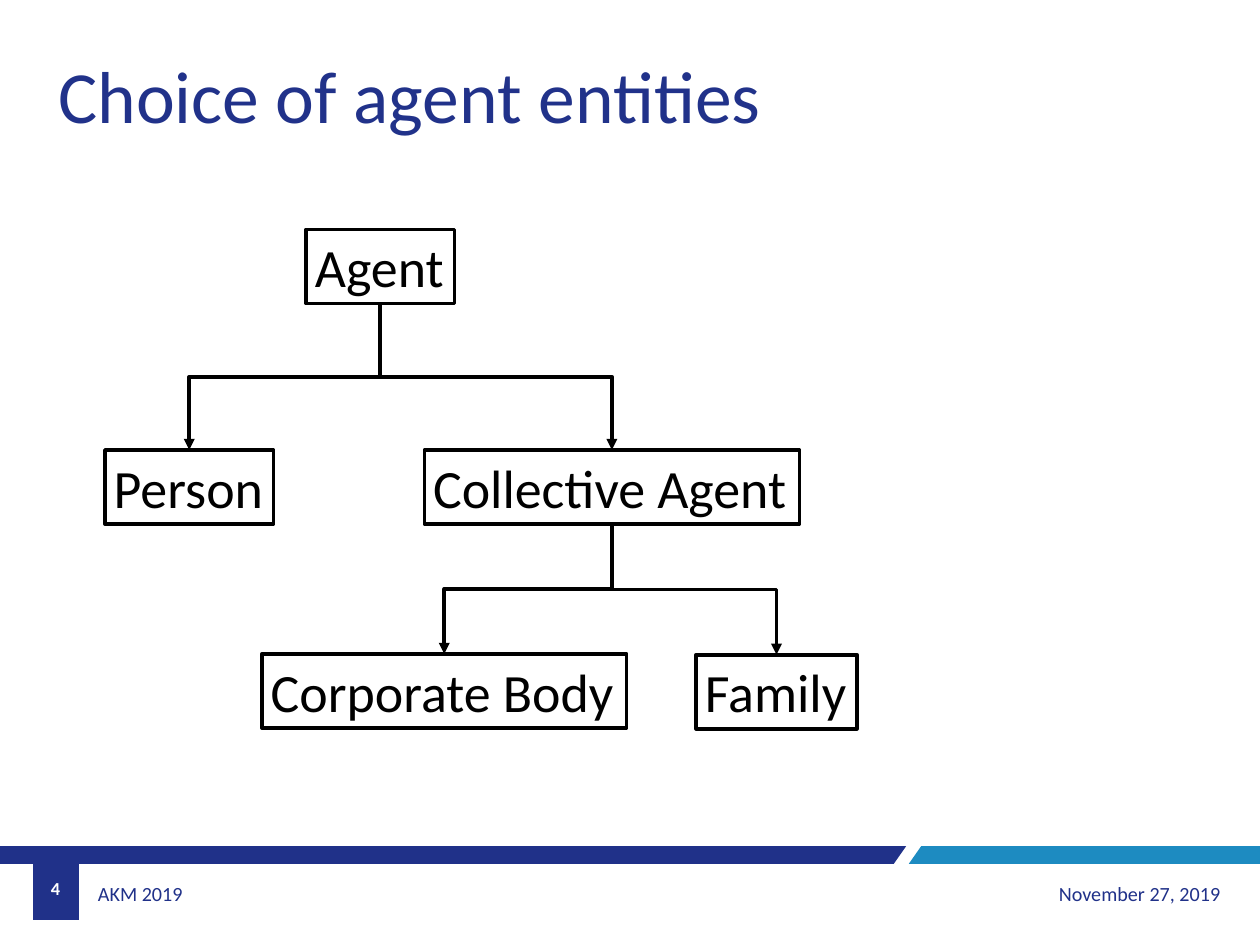
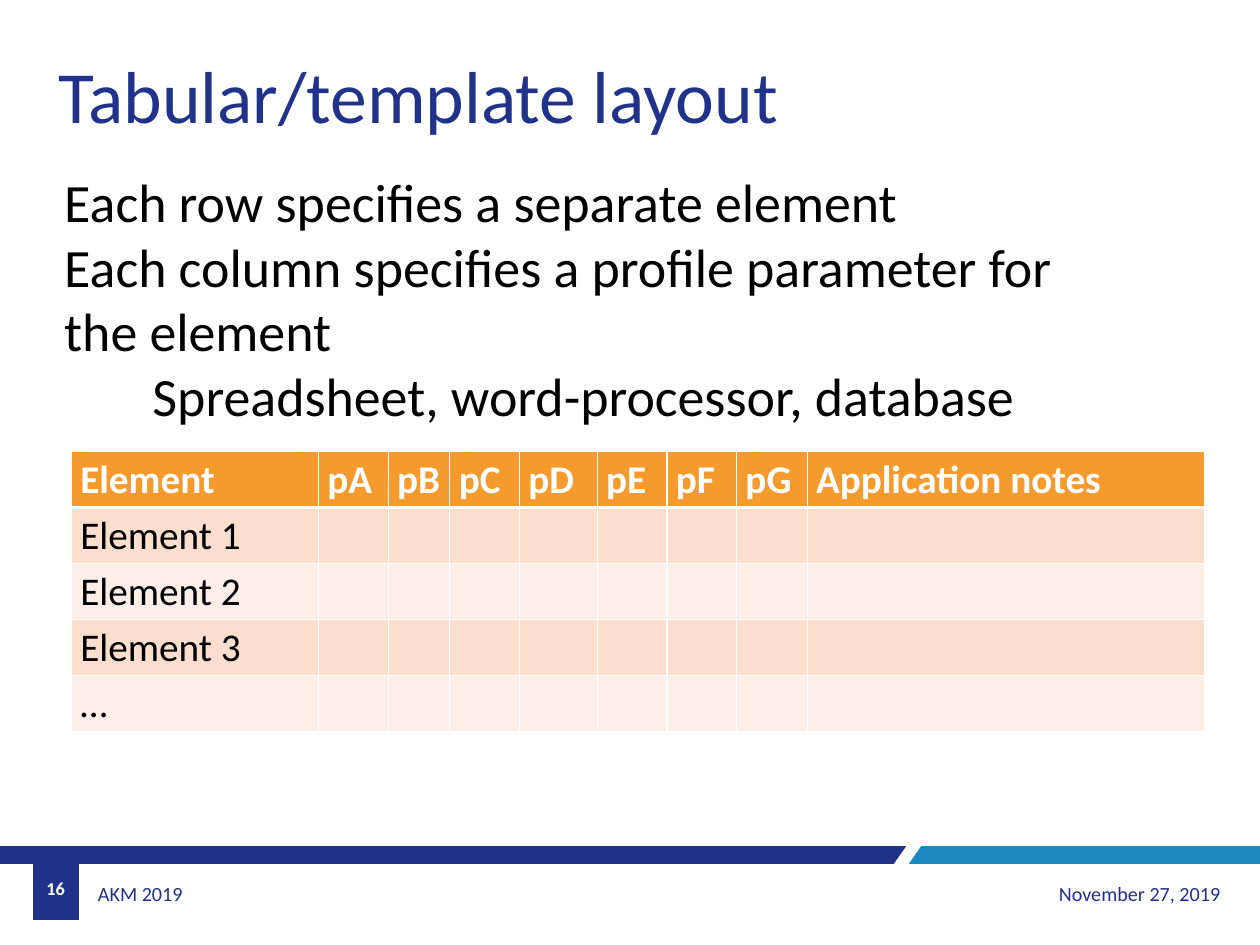
from dataclasses import dataclass
from typing import NamedTuple

from lxml.etree import SubElement
from pptx import Presentation
from pptx.dml.color import RGBColor
from pptx.enum.shapes import MSO_CONNECTOR, MSO_SHAPE
from pptx.enum.text import MSO_ANCHOR, MSO_AUTO_SIZE, PP_ALIGN
from pptx.oxml import parse_xml
from pptx.oxml.ns import nsdecls, qn
from pptx.shapes.autoshape import Shape
from pptx.slide import Slide
from pptx.table import _Cell
from pptx.text.text import TextFrame
from pptx.util import Inches, Pt


@dataclass(frozen=True)
class Theme:
    """Colours, type sizes and font shared by all slides."""

    font: str = "Calibri"
    navy: str = "203189"
    sky: str = "1D8BC1"
    title: str = "21328A"
    ink: str = "000000"
    paper: str = "FFFFFF"
    header: str = "F59B2D"
    bands: tuple[str, str] = ("FBDECD", "FDEFE8")
    title_size: float = 60
    body_size: float = 44
    table_size: float = 32
    footer_size: float = 16.4
    number_size: float = 14.9
    line: float = 3


class Box(NamedTuple):
    """Position and size in inches."""

    left: float
    top: float
    width: float
    height: float


class Entity(NamedTuple):
    """A box of the diagram and the name of its parent."""

    name: str
    left: float
    top: float
    width: float
    parent: str = ""


T = Theme()
SLIDE_WIDTH, SLIDE_HEIGHT = 14.28, 10.71
BAND_TOP, BAND_BOTTOM = 9.59, 9.79
FOOTER_TOP, FOOTER_HEIGHT = 9.85, 0.55
ENTITY_HEIGHT = 0.84
ENTITIES = (
    Entity("Agent", 3.47, 2.6, 1.68),
    Entity("Person", 1.19, 5.1, 1.91, "Agent"),
    Entity("Collective Agent", 4.81, 5.1, 4.25, "Agent"),
    Entity("Corporate Body", 2.97, 7.41, 4.13, "Collective Agent"),
    Entity("Family", 7.89, 7.42, 1.82, "Collective Agent"),
)
COLUMNS = {
    "Element": 2.8, "pA": 0.79, "pB": 0.7, "pC": 0.79, "pD": 0.88,
    "pE": 0.79, "pF": 0.79, "pG": 0.8, "Application notes": 4.5,
}
ROWS = ("Element 1", "Element 2", "Element 3", "…")
ROW_HEIGHT = 0.63
BODY = (
    "Each row specifies a separate element",
    "Each column specifies a profile parameter for the element",
    "Spreadsheet, word-processor, database",
)


def rgb(color: str) -> RGBColor:
    """Turn a hex string into a colour."""
    return RGBColor.from_string(color)


def emu(box: Box) -> tuple[Inches, ...]:
    """Convert a box to lengths."""
    return tuple(Inches(v) for v in box)


def write(tf: TextFrame, text: str, size: float, color: str, *, bold: bool = False,
          align: PP_ALIGN = PP_ALIGN.LEFT) -> None:
    """Set the text of a frame and format its runs."""
    tf.text = text
    for p in tf.paragraphs:
        p.alignment = align
        for r in p.runs:
            r.font.name, r.font.size, r.font.bold = T.font, Pt(size), bold
            r.font.color.rgb = rgb(color)


def add_text(s: Slide, box: Box, text: str, size: float, color: str, *, bold: bool = False,
             align: PP_ALIGN = PP_ALIGN.LEFT, anchor: MSO_ANCHOR = MSO_ANCHOR.MIDDLE) -> TextFrame:
    """Add a wrapping text box."""
    tf = s.shapes.add_textbox(*emu(box)).text_frame
    tf.word_wrap = True
    tf.vertical_anchor = anchor
    write(tf, text, size, color, bold=bold, align=align)
    return tf


def add_area(s: Slide, points: list[tuple[float, float]], color: str) -> None:
    """Draw a filled polygon without outline."""
    start, *rest = [(Inches(x), Inches(y)) for x, y in points]
    builder = s.shapes.build_freeform(*start)
    builder.add_line_segments(rest, close=True)
    sp = builder.convert_to_shape()
    sp.shadow.inherit = False
    sp.fill.solid()
    sp.fill.fore_color.rgb = rgb(color)
    sp.line.fill.background()


def add_slide(prs: Presentation, title: str, title_width: float, number: int) -> Slide:
    """Add a slide with title, bands and footer."""
    s = prs.slides.add_slide(prs.slide_layouts[5])
    add_area(s, [(0, BAND_TOP), (10.27, BAND_TOP), (10.13, BAND_BOTTOM), (0, BAND_BOTTOM)], T.navy)
    add_area(s, [(10.44, BAND_TOP), (SLIDE_WIDTH, BAND_TOP), (SLIDE_WIDTH, BAND_BOTTOM),
                 (10.3, BAND_BOTTOM)], T.sky)
    add_area(s, [(0.37, BAND_TOP), (0.89, BAND_TOP), (0.89, 10.43), (0.37, 10.43)], T.navy)
    tf = add_text(s, Box(1.04, FOOTER_TOP, 5.52, FOOTER_HEIGHT), "AKM 2019", T.footer_size, T.navy)
    tf.margin_left = tf.margin_right = Inches(0.07)
    tf.margin_top = tf.margin_bottom = Inches(0.04)
    add_text(s, Box(10.27, FOOTER_TOP, 3.66, FOOTER_HEIGHT), "November 27, 2019",
             T.footer_size, T.navy, align=PP_ALIGN.RIGHT)
    add_text(s, Box(0.37, BAND_BOTTOM, 0.52, FOOTER_HEIGHT), str(number), T.number_size,
             T.paper, bold=True, align=PP_ALIGN.CENTER)
    sp = s.shapes.title
    sp.left, sp.top, sp.width, sp.height = emu(Box(0.56, 0.52, title_width, 1.11))
    tf = sp.text_frame
    tf.word_wrap = False
    tf.auto_size = MSO_AUTO_SIZE.NONE
    tf.vertical_anchor = MSO_ANCHOR.TOP
    write(tf, title, T.title_size, T.title)
    return s


def add_entity(s: Slide, entity: Entity) -> Shape:
    """Draw one outlined box of the diagram."""
    box = Box(entity.left, entity.top, entity.width, ENTITY_HEIGHT)
    sp = s.shapes.add_shape(MSO_SHAPE.RECTANGLE, *emu(box))
    sp.shadow.inherit = False
    sp.fill.background()
    sp.line.color.rgb = rgb(T.ink)
    sp.line.width = Pt(T.line)
    tf = sp.text_frame
    tf.word_wrap = False
    tf.vertical_anchor = MSO_ANCHOR.TOP
    write(tf, entity.name, T.body_size, T.ink)
    return sp


def add_branch(s: Slide, parent: Shape, child: Shape) -> None:
    """Join the bottom of a parent to the top of a child with an elbow arrow."""
    x1, y1 = parent.left + parent.width // 2, parent.top + parent.height
    x2, y2 = child.left + child.width // 2, child.top
    c = s.shapes.add_connector(MSO_CONNECTOR.ELBOW, x1, y1, x2, y2)
    c.begin_connect(parent, 2)
    c.end_connect(child, 0)
    to_right = x2 > x1
    run, drop = abs(x2 - x1), y2 - y1
    xfrm = c._element.spPr.xfrm
    xfrm.flipH, xfrm.flipV = to_right, False
    c.rotation = 270 if to_right else 90
    c.left, c.top = (x1 + x2 - drop) // 2, (y1 + y2 - run) // 2
    c.width, c.height = drop, run
    c.line.color.rgb = rgb(T.ink)
    c.line.width = Pt(T.line)
    SubElement(c.line._get_or_add_ln(), qn("a:tailEnd"), type="triangle")
    SubElement(c._element.spPr, qn("a:effectLst"))


def style_cell(cell: _Cell, text: str, row: int) -> None:
    """Fill, border and write one table cell."""
    header = row == 0
    cell.fill.solid()
    cell.fill.fore_color.rgb = rgb(T.header if header else T.bands[(row - 1) % 2])
    widths = {"L": 1, "R": 1, "T": 3 if row == 1 else 1, "B": 3 if header else 1}
    for i, (side, width) in enumerate(widths.items()):
        cell._tc.get_or_add_tcPr().insert(i, parse_xml(
            f'<a:ln{side} {nsdecls("a")} w="{Pt(width)}"><a:solidFill>'
            f'<a:srgbClr val="{T.paper}"/></a:solidFill></a:ln{side}>'))
    write(cell.text_frame, text, T.table_size, T.paper if header else T.ink, bold=header)


def add_element_table(s: Slide) -> None:
    """Add the table of elements and profile parameters."""
    rows = [list(COLUMNS)] + [[name] + [""] * (len(COLUMNS) - 1) for name in ROWS]
    box = Box(0.81, 5.12, sum(COLUMNS.values()), ROW_HEIGHT * len(rows))
    table = s.shapes.add_table(len(rows), len(COLUMNS), *emu(box)).table
    for column, width in zip(table.columns, COLUMNS.values()):
        column.width = Inches(width)
    for i, texts in enumerate(rows):
        table.rows[i].height = Inches(ROW_HEIGHT)
        for j, text in enumerate(texts):
            style_cell(table.cell(i, j), text, i)


def build_agents(prs: Presentation) -> None:
    """Build the diagram of agent entities."""
    s = add_slide(prs, "Choice of agent entities", 8.28, 4)
    boxes = {e.name: add_entity(s, e) for e in ENTITIES}
    for e in ENTITIES:
        if e.parent:
            add_branch(s, boxes[e.parent], boxes[e.name])


def build_layout(prs: Presentation) -> None:
    """Build the slide on the tabular layout."""
    s = add_slide(prs, "Tabular/template layout", 8.56, 16)
    add_element_table(s)
    tf = add_text(s, Box(0.63, 1.86, 12.13, 3.06), "\n".join(BODY), T.body_size, T.ink,
                  anchor=MSO_ANCHOR.TOP)
    tf.paragraphs[-1]._p.get_or_add_pPr().set("marL", str(Inches(1)))


def main() -> None:
    """Build and save the presentation."""
    prs = Presentation()
    prs.slide_width, prs.slide_height = Inches(SLIDE_WIDTH), Inches(SLIDE_HEIGHT)
    build_agents(prs)
    build_layout(prs)
    prs.save("out.pptx")


if __name__ == "__main__":
    main()
